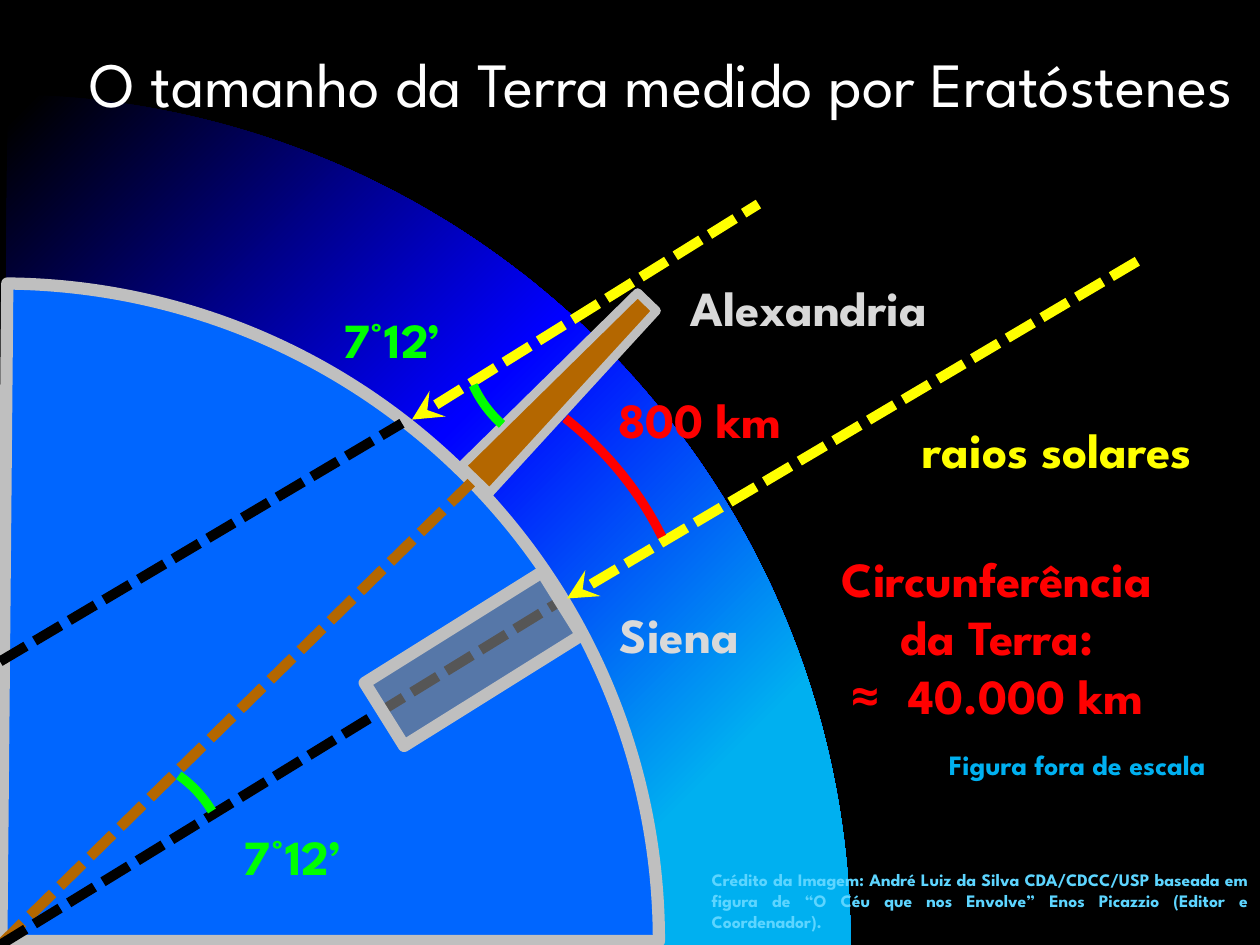
from lxml.etree import SubElement
from pptx import Presentation
from pptx.dml.color import RGBColor
from pptx.enum.dml import MSO_LINE
from pptx.enum.shapes import MSO_CONNECTOR, MSO_SHAPE
from pptx.enum.text import MSO_ANCHOR, MSO_AUTO_SIZE, PP_ALIGN
from pptx.oxml import parse_xml
from pptx.oxml.ns import nsdecls, qn
from pptx.util import Pt

C = {"black": "000000", "white": "FFFFFF", "silver": "BFBFBF", "label": "D9D9D9",
     "gray": "808080", "earth": "0066FF", "sky": "00B0F0", "blue": "0000FF",
     "brown": "B46700", "yellow": "FFFF00", "green": "00FF00", "red": "FF0000",
     "credit": "5DD5FF"}
FONT = "League Spartan"

prs = Presentation()
prs.slide_width, prs.slide_height = Pt(720), Pt(540)
s = prs.slides.add_slide(prs.slide_layouts[5])
s.background.fill.solid()
s.background.fill.fore_color.rgb = RGBColor.from_string(C["black"])


def add_figure(kind, box, rotation, adjustments, fill=None, line=None, width=0):
    sp = s.shapes.add_shape(kind, *[Pt(v) for v in box])
    sp.shadow.inherit = False
    sp.rotation = rotation
    for i, value in enumerate(adjustments):
        sp.adjustments[i] = value
    if fill:
        sp.fill.solid()
        sp.fill.fore_color.rgb = RGBColor.from_string(C[fill])
    else:
        sp.fill.background()
    if line:
        sp.line.color.rgb = RGBColor.from_string(C[line])
        sp.line.width = Pt(width)
    else:
        sp.line.fill.background()
    return sp


def add_run(p, text, size, color, bold=True, font=FONT):
    r = p.add_run()
    r.text = text
    r.font.size, r.font.bold, r.font.name = Pt(size), bold, font
    r.font.color.rgb = RGBColor.from_string(C[color])


QUARTER = (108.31, 162)
atmosphere = add_figure(MSO_SHAPE.PIE, (-486, 54, 972, 972), 90, QUARTER)
stops = "".join(f'<a:gs pos="{pos}000"><a:srgbClr val="{C[name]}"/></a:gs>'
                for pos, name in ((34, "sky"), (52, "blue"), (74, "black")))
gradient = parse_xml(
    f'<a:gradFill {nsdecls("a")} rotWithShape="0"><a:gsLst>{stops}</a:gsLst>'
    '<a:path path="circle"><a:fillToRect l="100000" t="100000"/></a:path></a:gradFill>')
spPr = atmosphere.element.spPr
spPr.replace(spPr.find(qn("a:noFill")), gradient)

title = s.shapes.title
title.left, title.top, title.width, title.height = Pt(0), Pt(21.6), Pt(720), Pt(90)
tf = title.text_frame
tf.word_wrap, tf.auto_size, tf.vertical_anchor = True, MSO_AUTO_SIZE.NONE, MSO_ANCHOR.TOP
p = tf.paragraphs[0]
p.alignment = PP_ALIGN.CENTER
add_run(p, "\tO tamanho da Terra medido por Eratóstenes", 36, "white", False)
tree = s.shapes.element
tree.remove(title.element)
tree.append(title.element)

add_figure(MSO_SHAPE.PIE, (-375, 162, 751.5, 751.5), 90, QUARTER, "earth", "silver", 7)

rays = [
    ((0, 540), (269.3, 275.8), "brown", 6, False),
    ((0, 540), (320.4, 343.4), "black", 5.75, False),
    ((0, 378), (229.7, 241.9), "black", 5.75, False),
    ((235.4, 239.8), (433.4, 116.6), "yellow", 5.75, True),
    ((324, 342), (651.6, 148.3), "yellow", 5.75, True),
]
for start, end, color, width, arrow in rays:
    ray = s.shapes.add_connector(MSO_CONNECTOR.STRAIGHT, *[Pt(v) for v in start + end])
    ray.line.color.rgb = RGBColor.from_string(C[color])
    ray.line.width = Pt(width)
    ray.line.dash_style = MSO_LINE.SQUARE_DOT
    if arrow:
        SubElement(ray.line._get_or_add_ln(), qn("a:headEnd"), type="stealth")
    SubElement(ray.element.spPr, qn("a:effectLst"))

add_figure(MSO_SHAPE.TRAPEZOID, (309.6, 152.6, 22.3, 141.1), 44, [0.165], "brown", "silver", 5)
well = add_figure(MSO_SHAPE.TRAPEZOID, (249.1, 316.8, 42.5, 119.5), 238, [0],
                  "gray", "silver", 7)
well_color = well.element.spPr.find(qn("a:solidFill")).find(qn("a:srgbClr"))
SubElement(well_color, qn("a:alpha"), val="68000")

arcs = [
    ((263.5, 123.8, 136.8, 134.6), 296.6, (193.13, 207.27), "green"),
    ((-5, 432, 136.8, 134.6), 110, (193.13, 207.27), "green"),
    ((12.2, 175.7, 367.9, 403.2), 103.6, (182.86, 198.64), "red"),
]
for box, rotation, angles, color in arcs:
    arc = add_figure(MSO_SHAPE.ARC, box, rotation, angles, None, color, 5.25)
    arc.element.spPr.xfrm.set("flipH", "1")

labels = [
    ((121.7, 468.7, 90.7, 41), ["7°12’"], 28, "green"),
    ((178.6, 173.5, 90.7, 41), ["7°12’"], 28, "green"),
    ((337.7, 218.9, 124.6, 41), ["800 km"], 28, "red"),
    ((371.5, 154.8, 181.4, 41), ["Alexandria"], 28, "label"),
    ((297.4, 342, 181.4, 41), ["Siena"], 28, "label"),
    ((433.4, 309.6, 272.2, 108.7), ["Circunferência", "da Terra:", "≈ 40.000 km"], 28, "red"),
    ((524.9, 423.4, 181.4, 26.6), ["Figura fora de escala"], 16, "sky"),
    ((507.6, 236.2, 193, 41), ["raios solares"], 28, "yellow"),
    ((399.6, 493.2, 320.4, 43.9),
     ["Crédito da Imagem: André Luiz da Silva CDA/CDCC/USP baseada em figura de "
      "“O Céu que nos Envolve” Enos Picazzio (Editor e Coordenador)."], 10, "credit"),
]
for box, lines, size, color in labels:
    tf = s.shapes.add_textbox(*[Pt(v) for v in box]).text_frame
    tf.word_wrap = size != 16
    tf.auto_size = MSO_AUTO_SIZE.SHAPE_TO_FIT_TEXT
    for i, text in enumerate(lines):
        p = tf.add_paragraph() if i else tf.paragraphs[0]
        p.alignment = PP_ALIGN.JUSTIFY if color == "credit" else PP_ALIGN.CENTER
        if text.startswith("≈ "):
            add_run(p, "≈ ", size, color, font="Noto Sans Mono")
            text = text[2:]
        add_run(p, text, size, color)

prs.save("out.pptx")
